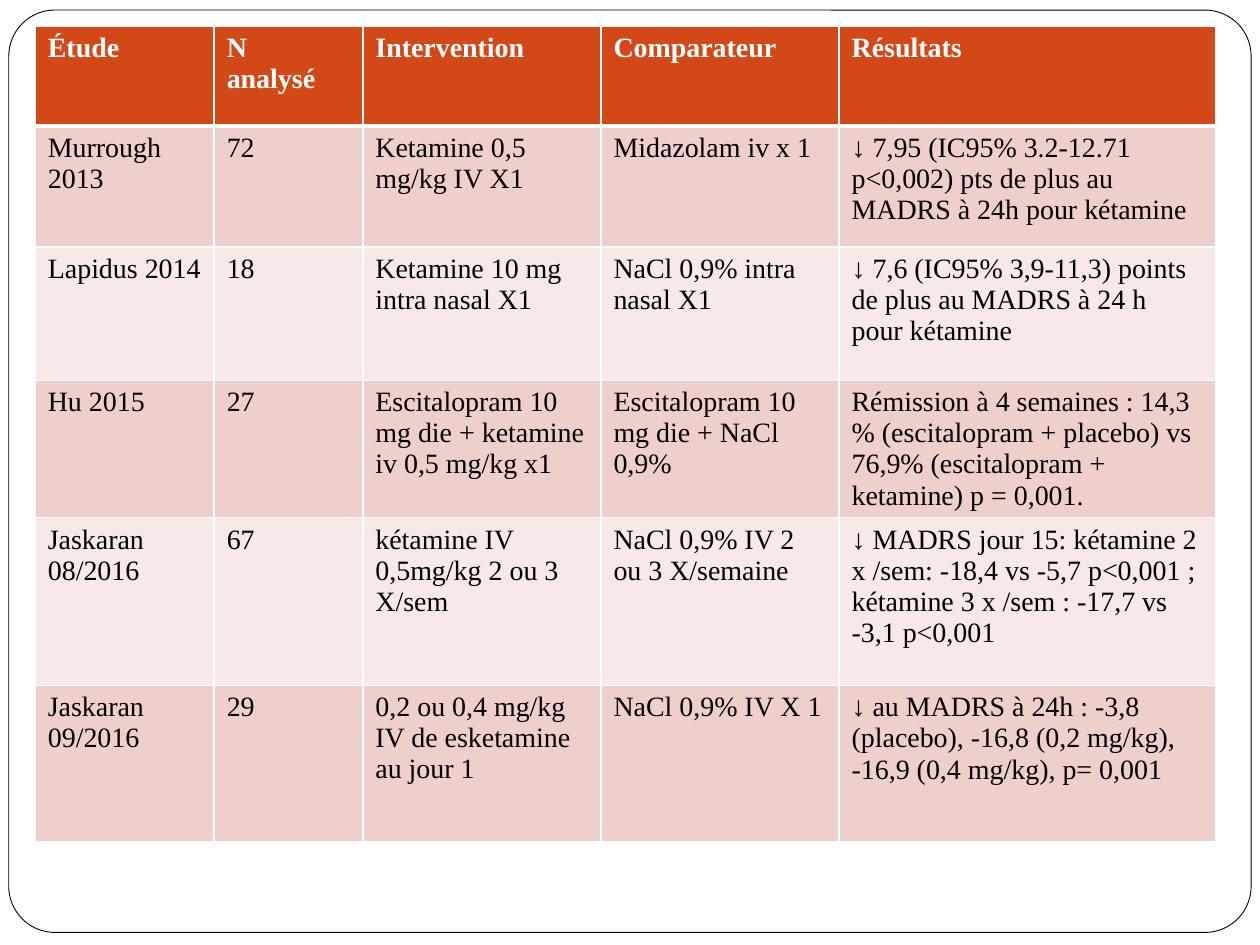
from lxml import etree
from pptx import Presentation
from pptx import util as u
from pptx.dml.color import RGBColor
from pptx.enum import shapes
from pptx.oxml import ns

COLORS = {
    "white": "FFFFFF",
    "black": "000000",
    "header": "D34817",
    "odd": "EFCFCC",
    "even": "F7E9E8",
}
FONT, ARROW_FONT, ARROW = "Times New Roman", "Arial", "↓"
COL_WIDTHS = [1.42, 1.18, 1.89, 1.89, 2.99]
ROW_HEIGHTS = [0.79, 0.96, 1.06, 1.09, 1.33, 1.24]
STUDIES = [
    ["Étude", "N\nanalysé", "Intervention", "Comparateur", "Résultats"],
    ["Murrough 2013", "72", "Ketamine 0,5 mg/kg IV X1", "Midazolam iv x 1",
     "↓ 7,95 (IC95% 3.2-12.71 p<0,002) pts de plus au MADRS à 24h pour kétamine"],
    ["Lapidus 2014", "18", "Ketamine 10 mg intra nasal X1", "NaCl 0,9% intra nasal X1",
     "↓ 7,6 (IC95% 3,9-11,3) points de plus au MADRS à 24 h pour kétamine"],
    ["Hu 2015", "27", "Escitalopram 10 mg die + ketamine iv 0,5 mg/kg x1",
     "Escitalopram 10 mg die + NaCl 0,9%",
     "Rémission à 4 semaines : 14,3 % (escitalopram + placebo) vs 76,9% "
     "(escitalopram + ketamine) p = 0,001."],
    ["Jaskaran 08/2016", "67", "kétamine IV 0,5mg/kg 2 ou 3 X/sem",
     "NaCl 0,9% IV 2 ou 3 X/semaine",
     "↓ MADRS jour 15: kétamine 2 x /sem: -18,4 vs -5,7 p<0,001 ; "
     "kétamine 3 x /sem : -17,7 vs -3,1 p<0,001"],
    ["Jaskaran 09/2016", "29", "0,2 ou 0,4 mg/kg IV de esketamine au jour 1",
     "NaCl 0,9% IV X 1",
     "↓ au MADRS à 24h : -3,8 (placebo), -16,8 (0,2 mg/kg), -16,9 (0,4 mg/kg), p= 0,001"],
]


def rgb(name):
    return RGBColor.from_string(COLORS[name])


def add_frame(s):
    sp = s.shapes.add_shape(shapes.MSO_SHAPE.ROUNDED_RECTANGLE, u.Inches(0.07),
                            u.Inches(0.08), u.Inches(9.86), u.Inches(7.32))
    sp.adjustments[0] = 0.05
    sp.shadow.inherit = False
    sp.fill.solid()
    sp.fill.fore_color.rgb = rgb("white")
    sp.line.color.rgb = rgb("black")
    sp.line.width = u.Pt(0.5)


def set_borders(cell, widths):
    tc_pr = cell._tc.get_or_add_tcPr()
    for side, width in widths.items():
        ln = etree.SubElement(tc_pr, ns.qn(f"a:ln{side}"), w=str(u.Pt(width)))
        fill = etree.SubElement(ln, ns.qn("a:solidFill"))
        etree.SubElement(fill, ns.qn("a:srgbClr"), val=COLORS["white"])


def set_text(cell, content, color, bold):
    tf = cell.text_frame
    tf.text = content
    for p in tf.paragraphs:
        if p.text.startswith(ARROW):
            rest = p.text[len(ARROW):]
            p.text = ARROW
            p.add_run().text = rest
        for r in p.runs:
            r.font.name = ARROW_FONT if r.text == ARROW else FONT
            r.font.size = u.Pt(16)
            r.font.bold = bold
            r.font.color.rgb = rgb(color)


def add_study_table(s):
    table = s.shapes.add_table(
        len(STUDIES), len(COL_WIDTHS), u.Inches(0.28), u.Inches(0.21),
        u.Inches(sum(COL_WIDTHS)), u.Inches(sum(ROW_HEIGHTS))).table
    for col, width in zip(table.columns, COL_WIDTHS):
        col.width = u.Inches(width)
    for i, (row, height, study) in enumerate(zip(table.rows, ROW_HEIGHTS, STUDIES)):
        row.height = u.Inches(height)
        header = i == 0
        fill = "header" if header else "odd" if i % 2 else "even"
        borders = {"L": 1, "R": 1, "T": 3 if i == 1 else 1, "B": 3 if header else 1}
        for cell, content in zip(row.cells, study):
            set_borders(cell, borders)
            cell.fill.solid()
            cell.fill.fore_color.rgb = rgb(fill)
            set_text(cell, content, "white" if header else "black", header)


def main():
    prs = Presentation()
    prs.slide_width, prs.slide_height = u.Inches(10), u.Inches(7.5)
    s = prs.slides.add_slide(prs.slide_layouts[6])
    add_frame(s)
    add_study_table(s)
    prs.save("out.pptx")


if __name__ == "__main__":
    main()
